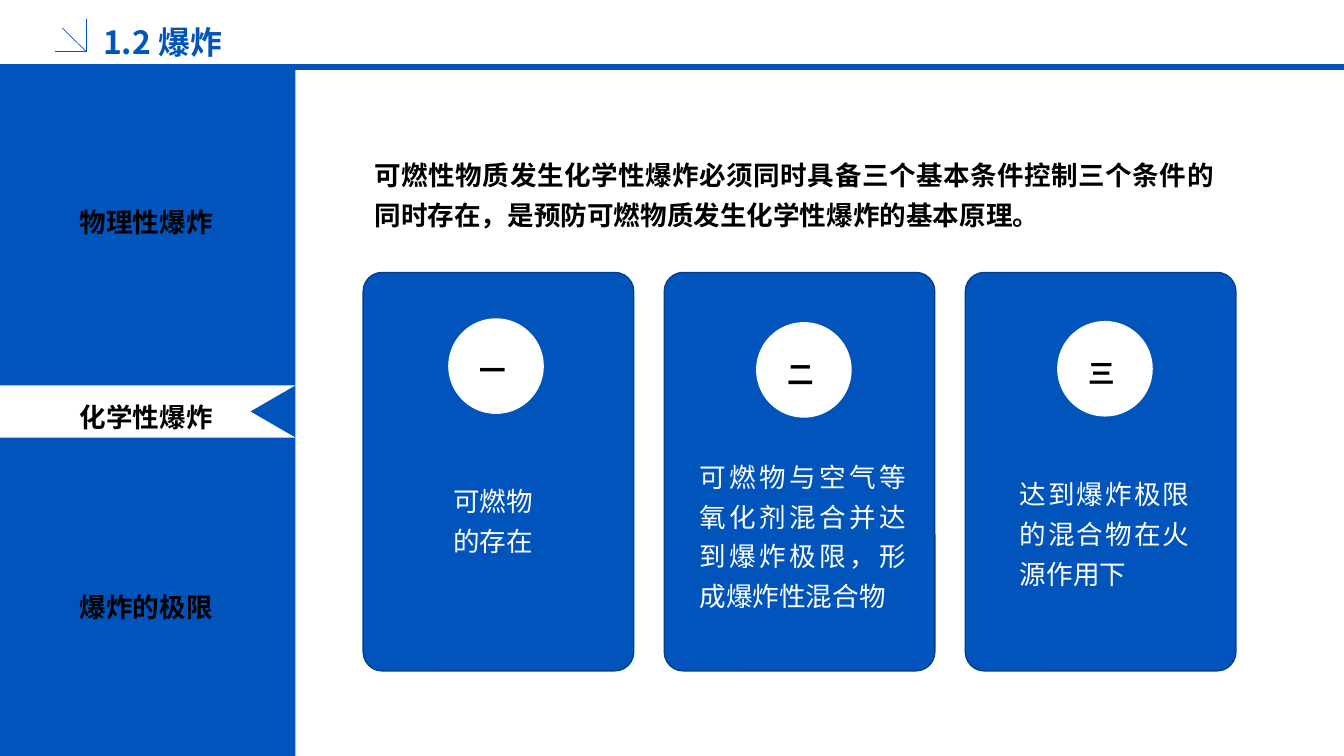
from lxml.etree import SubElement
from pptx import Presentation
from pptx.dml.color import RGBColor
from pptx.enum.shapes import MSO_CONNECTOR, MSO_SHAPE
from pptx.enum.text import MSO_ANCHOR as Anchor, PP_ALIGN as Align
from pptx.oxml.ns import qn
from pptx.util import Cm, Pt

# Content (lengths in cm)
BLUE, EDGE, WHITE, BLACK = "0154BC", "013E8B", "FFFFFF", "000000"
CJK = "Noto Sans CJK SC"
SLIDE_W, SLIDE_H = 35.71, 20.09

TITLE = "1.2 爆炸"
INTRO = ("可燃性物质发生化学性爆炸必须同时具备三个基本条件控制三个条件的"
         "同时存在，是预防可燃物质发生化学性爆炸的基本原理。")
TOPICS = [("物理性爆炸", 5.23), ("化学性爆炸", 10.41), ("爆炸的极限", 15.44)]

# Numeral, circle offset and top, condition, its offset, top, width, height, alignment
CONDITIONS = [
    ("一", 2.26, 8.46, "可燃物的存在", 1.93, 12.55, 3.05, 2.29, Align.CENTER),
    ("二", 2.44, 8.56, "可燃物与空气等氧化剂混合并达到爆炸极限，形成爆炸性混合物",
     0.69, 11.91, 5.99, 4.52, Align.JUSTIFY),
    ("三", 2.44, 8.53, "达到爆炸极限的混合物在火源作用下",
     1.2, 12.37, 5, 3.45, Align.JUSTIFY),
]

# Layout
RULE_Y = 1.78
CORNER_X, CORNER_Y = 2.29, 1.37
CORNER_ENDS = [(1.45, CORNER_Y), (CORNER_X, 0.51), (1.65, 0.74)]
SIDEBAR_W, SIDEBAR_TOP = 7.85, 1.85
TAB_TOP, TAB_BOTTOM, NOTCH_X = 10.24, 11.63, 6.65
CARD_LEFT, CARD_TOP, CARD_W, CARD_H, CARD_PITCH = 9.65, 7.24, 7.19, 10.59, 8
CIRCLE = 2.54

deck = Presentation()
deck.slide_width, deck.slide_height = Cm(SLIDE_W), Cm(SLIDE_H)
slide = deck.slides.add_slide(deck.slide_layouts[6])
shapes = slide.shapes


def color(hex_code):
    return RGBColor.from_string(hex_code)


def paint(shape, fill, edge=None):
    shape.shadow.inherit = False
    shape.fill.solid()
    shape.fill.fore_color.rgb = color(fill)
    if edge:
        shape.line.color.rgb = color(edge)
        shape.line.width = Pt(1)
    else:
        shape.line.fill.background()
    return shape


def add_block(kind, left, top, width, height, fill, edge=None):
    block = shapes.add_shape(kind, Cm(left), Cm(top), Cm(width), Cm(height))
    return paint(block, fill, edge)


def add_line(x1, y1, x2, y2, width):
    line = shapes.add_connector(MSO_CONNECTOR.STRAIGHT, Cm(x1), Cm(y1), Cm(x2), Cm(y2))
    line.line.color.rgb = color(BLUE)
    line.line.width = Pt(width)
    SubElement(line._element.spPr, qn("a:effectLst"))


def add_text(text, left, top, width, height, size=20, font=CJK, ink=BLACK, bold=True,
             align=Align.CENTER, anchor=Anchor.TOP, spacing=1.25):
    frame = shapes.add_textbox(Cm(left), Cm(top), Cm(width), Cm(height)).text_frame
    frame.word_wrap = True
    frame.vertical_anchor = anchor
    paragraph = frame.paragraphs[0]
    paragraph.alignment, paragraph.line_spacing = align, spacing
    run = paragraph.add_run()
    run.text = text
    run.font.size, run.font.bold, run.font.name = Pt(size), bold, font
    run.font.color.rgb = color(ink)
    # East Asian typeface for the Chinese characters
    SubElement(run.font._element, qn("a:ea"), typeface=CJK)


# Header
add_line(0, RULE_Y, SLIDE_W, RULE_Y, 4.5)
for end_x, end_y in CORNER_ENDS:
    add_line(CORNER_X, CORNER_Y, end_x, end_y, 0.5)
add_text(TITLE, 2.49, 0.43, 8, 1.14, size=24, ink=BLUE,
         align=Align.LEFT, anchor=Anchor.MIDDLE, spacing=1.2)

# Sidebar with the notched tab of the current topic
add_block(MSO_SHAPE.RECTANGLE, 0, SIDEBAR_TOP, SIDEBAR_W, SLIDE_H - SIDEBAR_TOP, BLUE)
tab_points = [(SIDEBAR_W, TAB_TOP), (NOTCH_X, (TAB_TOP + TAB_BOTTOM) / 2),
              (SIDEBAR_W, TAB_BOTTOM), (0, TAB_BOTTOM)]
tab = shapes.build_freeform(0, Cm(TAB_TOP))
tab.add_line_segments([(Cm(x), Cm(y)) for x, y in tab_points], close=True)
paint(tab.convert_to_shape(), WHITE)
for topic, top in TOPICS:
    add_text(topic, 0.89, top, 5.99, 1.19, font="Arial", anchor=Anchor.MIDDLE, spacing=1.2)

# Introduction
add_text(INTRO, 9.7, 3.89, 22.81, 2.39, align=Align.JUSTIFY)

# Condition cards
for index, (numeral, circle_dx, circle_top, condition,
            text_dx, text_top, text_w, text_h, align) in enumerate(CONDITIONS):
    left = CARD_LEFT + index * CARD_PITCH
    card = add_block(MSO_SHAPE.ROUNDED_RECTANGLE, left, CARD_TOP, CARD_W, CARD_H, BLUE, EDGE)
    card.adjustments[0] = 0.07
    add_block(MSO_SHAPE.OVAL, left + circle_dx, circle_top, CIRCLE, CIRCLE, WHITE)
    add_text(numeral, left + circle_dx, circle_top + 0.62, 2.39, 1.22)
    add_text(condition, left + text_dx, text_top, text_w, text_h,
             ink=WHITE, bold=False, align=align)

deck.save("out.pptx")
